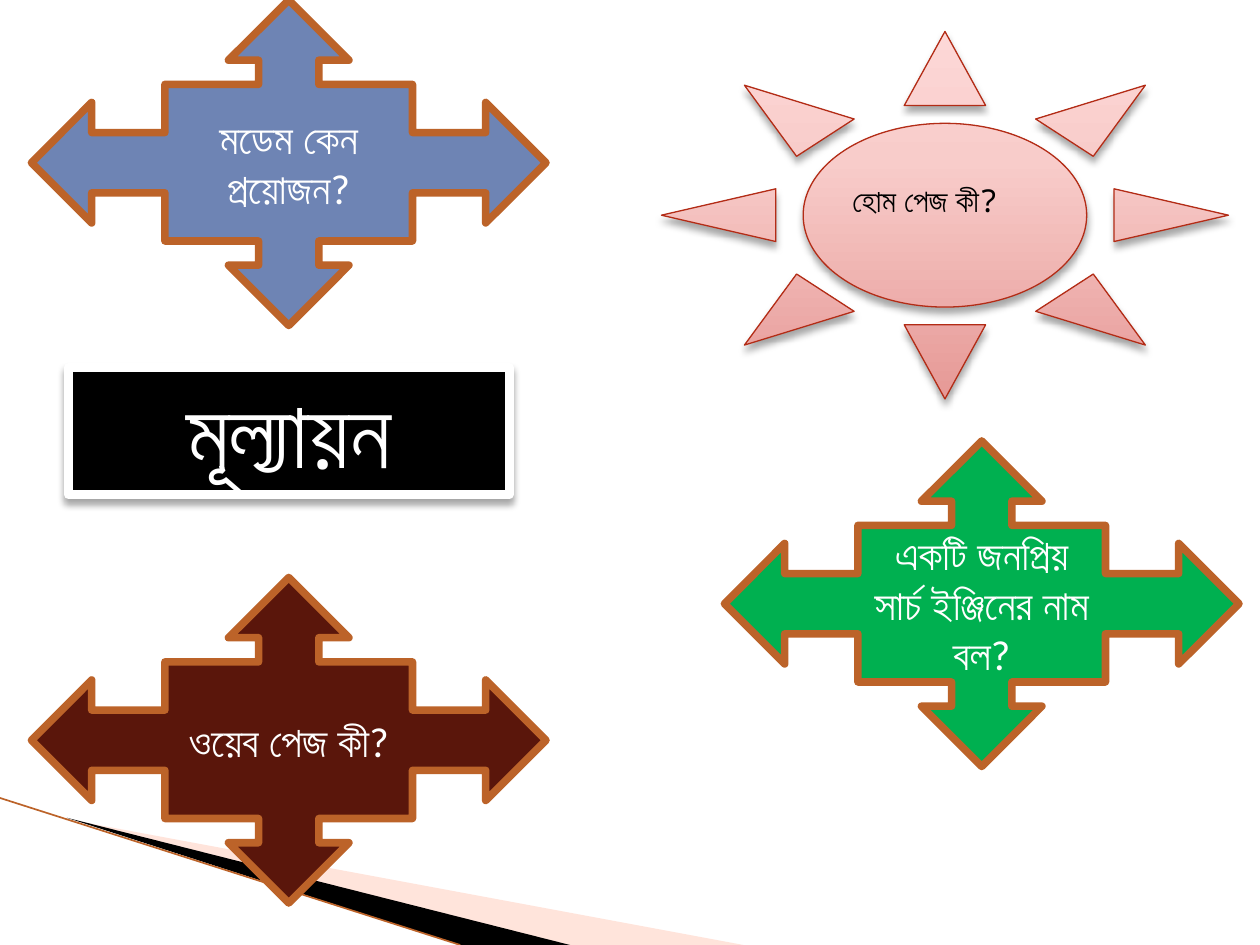
from copy import deepcopy

from pptx import Presentation
from pptx.dml.color import RGBColor
from pptx.enum.shapes import MSO_CONNECTOR, MSO_SHAPE
from pptx.enum.text import MSO_ANCHOR, MSO_AUTO_SIZE, PP_ALIGN
from pptx.oxml import parse_xml
from pptx.oxml.ns import nsdecls, qn
from pptx.util import Pt

WHITE = RGBColor(0xFF, 0xFF, 0xFF)
BLACK = RGBColor(0, 0, 0)
PEACH = RGBColor(0xFF, 0xBC, 0xA5)
ORANGE = RGBColor(0xBC, 0x63, 0x29)
RED = RGBColor(0xB3, 0x2C, 0x16)
BLUE = RGBColor(0x6E, 0x84, 0xB4)
GREEN = RGBColor(0x00, 0xB0, 0x50)
MAROON = RGBColor(0x5A, 0x16, 0x0B)
SUN_STOPS = [
    (0, RGBColor(0xE6, 0x99, 0x96)),
    (0.65, RGBColor(0xF8, 0xCC, 0xCA)),
    (1, RGBColor(0xFD, 0xD8, 0xD7)),
]

TITLE = "মূল্যায়ন"
SUN_QUESTION = "হোম পেজ কী?"
QUESTIONS = [
    ("মডেম কেন প্রয়োজন?", 18, 0, BLUE),
    ("একটি জনপ্রিয় সার্চ ইঞ্জিনের নাম বল?", 414, 252, GREEN),
    ("ওয়েব পেজ কী?", 18, 330, MAROON),
]
CALLOUT_SIZE = (294, 186)
WEDGES = [
    ([(39.6, 468.4), (424.8, 540), (325.4, 540)], PEACH, 40),
    ([(38.2, 467.3), (325.8, 540), (263, 540)], BLACK, 100),
]
YA, NUKTA, YYA = (chr(code) for code in (0x09AF, 0x09BC, 0x09DF))


def pts(*values):
    return [Pt(v) for v in values]


def paint(sp, fill, line, width):
    sp.fill.solid()
    sp.fill.fore_color.rgb = fill
    sp.line.color.rgb = line
    sp.line.width = Pt(width)
    sp.shadow.inherit = False


def add_shadow(sp):
    sp.shadow.inherit = False
    effects = sp._element.spPr.find(qn("a:effectLst"))
    effects.append(parse_xml(
        f'<a:outerShdw {nsdecls("a")} blurRad="{Pt(4)}" dist="{Pt(3)}" dir="5400000" rotWithShape="0">'
        '<a:srgbClr val="000000"><a:alpha val="35000"/></a:srgbClr></a:outerShdw>'))


def write(sp, text, size, color, font="Calibri", align=PP_ALIGN.CENTER, anchor=MSO_ANCHOR.TOP):
    tf = sp.text_frame
    tf.word_wrap = True
    tf.auto_size = MSO_AUTO_SIZE.NONE
    tf.vertical_anchor = anchor
    p = tf.paragraphs[0]
    p.text = text.replace(YA + NUKTA, YYA)
    p.alignment = align
    p.font.size = Pt(size)
    p.font.name = font
    p.font.color.rgb = color


def add_wedge(s, points, color, opacity):
    builder = s.shapes.build_freeform(*pts(*points[0]))
    builder.add_line_segments([pts(*point) for point in points[1:]], close=True)
    sp = builder.convert_to_shape()
    sp.fill.solid()
    sp.fill.fore_color.rgb = color
    sp.line.fill.background()
    sp.shadow.inherit = False
    if opacity < 100:
        rgb = sp._element.spPr.find(qn("a:solidFill"))[0]
        rgb.append(parse_xml(f'<a:alpha {nsdecls("a")} val="{opacity * 1000}"/>'))


def add_sun(s):
    sun = s.shapes.add_shape(MSO_SHAPE.SUN, *pts(378, 18, 324, 210))
    sun.fill.gradient()
    sun.fill.gradient_angle = 90
    stop_list = sun._element.spPr.find(qn("a:gradFill")).find(qn("a:gsLst"))
    stop_list.append(deepcopy(stop_list[0]))
    for stop, (position, color) in zip(sun.fill.gradient_stops, SUN_STOPS):
        stop.position = position
        stop.color.rgb = color
    sun.line.color.rgb = RED
    sun.line.width = Pt(0.75)
    add_shadow(sun)
    label = s.shapes.add_textbox(*pts(480, 99.6, 126, 29))
    write(label, SUN_QUESTION, 18, BLACK, "Noto Sans Mono", PP_ALIGN.LEFT)


def main():
    prs = Presentation()
    prs.slide_width, prs.slide_height = pts(720, 540)
    s = prs.slides.add_slide(prs.slide_layouts[5])

    for wedge in WEDGES:
        add_wedge(s, *wedge)
    edge = s.shapes.add_connector(MSO_CONNECTOR.STRAIGHT, *pts(0, 456, 263, 540))
    edge.line.color.rgb = ORANGE
    edge.line.width = Pt(0.95)
    edge._element.spPr.append(parse_xml(f'<a:effectLst {nsdecls("a")}/>'))

    for text, left, top, color in QUESTIONS:
        sp = s.shapes.add_shape(MSO_SHAPE.QUAD_ARROW_CALLOUT, *pts(left, top, *CALLOUT_SIZE))
        paint(sp, color, ORANGE, 4.33)
        write(sp, text, 24, WHITE, anchor=MSO_ANCHOR.MIDDLE)

    title = s.shapes.title
    title.left, title.top, title.width, title.height = pts(39, 210, 252, 72.7)
    paint(title, BLACK, WHITE, 5)
    add_shadow(title)
    write(title, TITLE, 54, WHITE)

    add_sun(s)
    prs.save("out.pptx")


if __name__ == "__main__":
    main()
